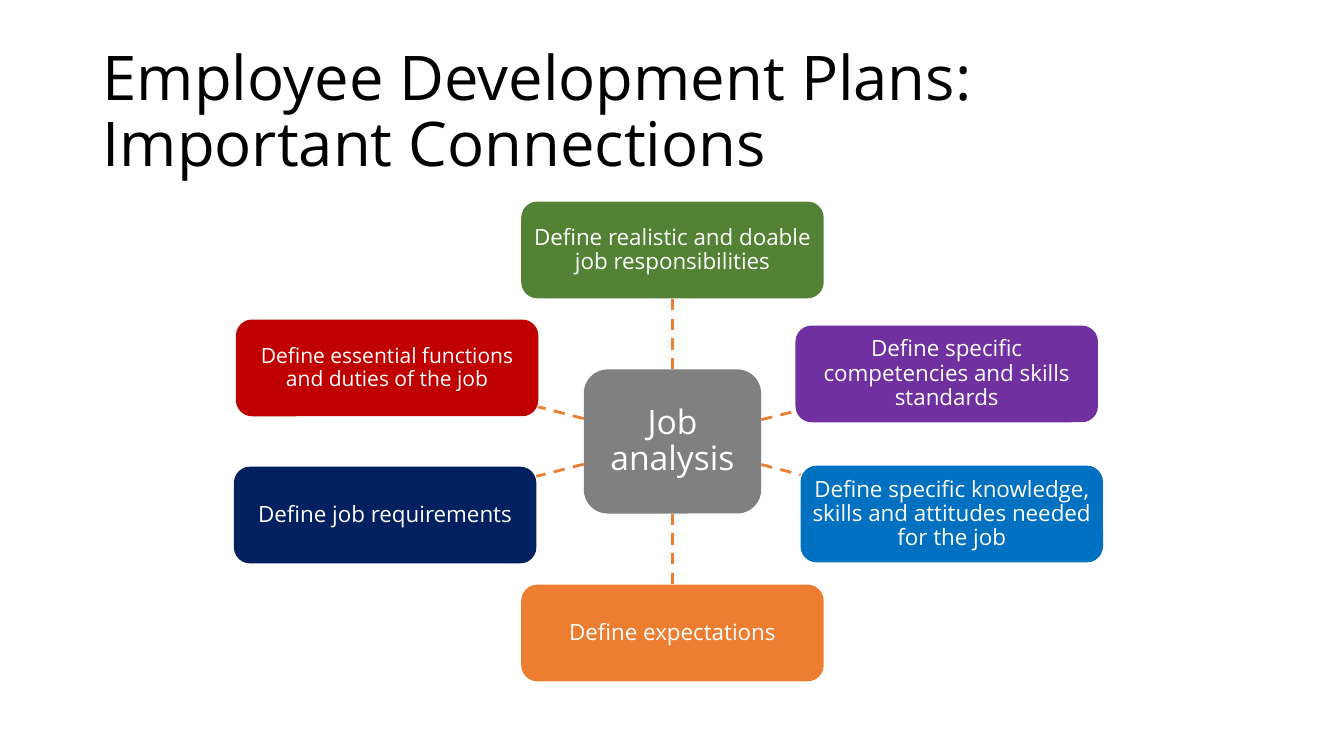
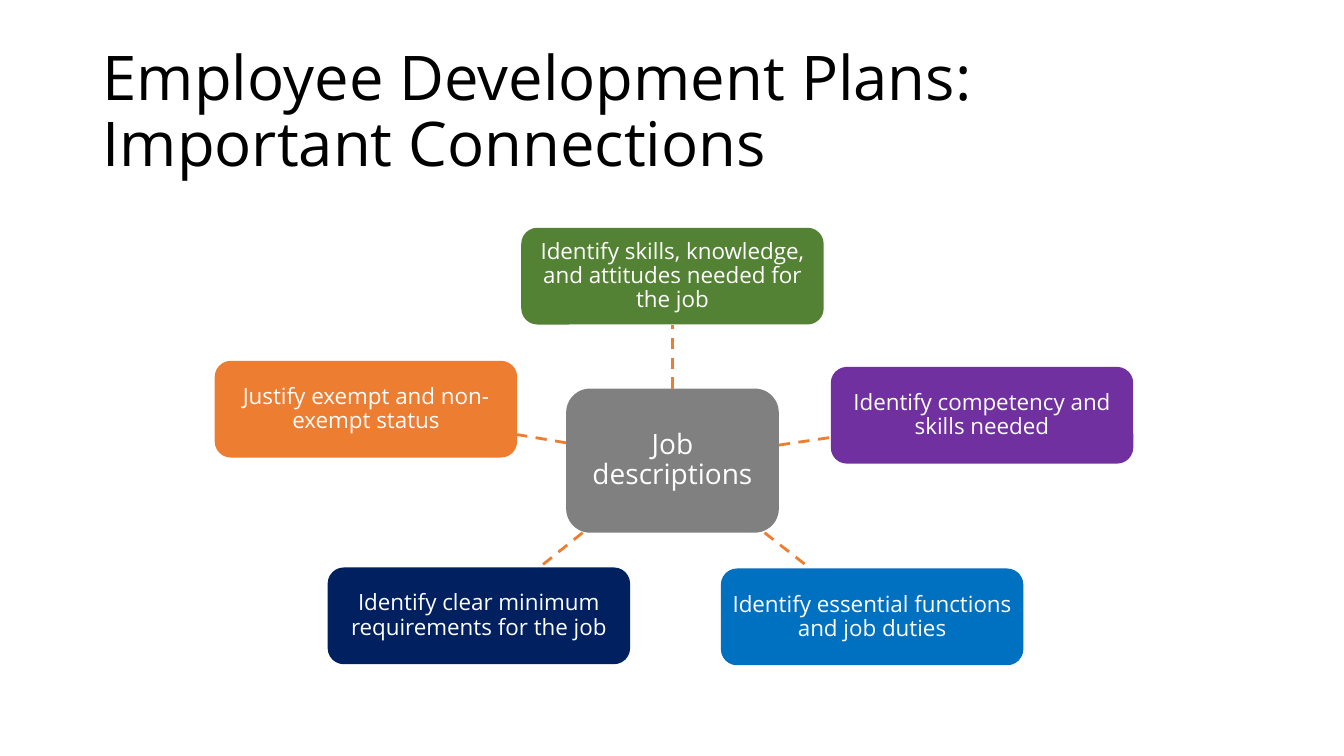
import dataclasses

import lxml.etree
import pptx
import pptx.dml.color
import pptx.enum.dml
import pptx.enum.shapes
import pptx.enum.text
import pptx.oxml.ns
import pptx.util

Inches = pptx.util.Inches


@dataclasses.dataclass(frozen=True)
class Theme:
    font: str = "Open Sans"
    black: str = "000000"
    white: str = "FFFFFF"
    gray: str = "808080"
    green: str = "548235"
    purple: str = "7030A0"
    blue: str = "0070C0"
    orange: str = "ED7D31"
    navy: str = "002060"
    red: str = "C00000"
    title: int = 44
    label: int = 16
    small: int = 15
    dash: int = 2
    inset: float = 0.04
    leading: float = 0.9


THEME = Theme()
TITLE = "Employee Development Plans: Important Connections"
TITLE_BOX = (0.92, 0.4, 11.5, 1.45)
NODE = (3, 0.96)

WHEELS = [
    dict(
        box=(0.92, 2, 11.5, 4.76),
        hub=("Job analysis", (1.76, 1.43), 24),
        nodes=[
            ("Define realistic and doable job responsibilities", THEME.green, THEME.label, (0, -1.9)),
            ("Define specific competencies and skills standards", THEME.purple, THEME.label, (2.72, -0.67)),
            ("Define specific knowledge, skills and attitudes needed for the job", THEME.blue, THEME.label, (2.77, 0.72)),
            ("Define expectations", THEME.orange, THEME.label, (0, 1.9)),
            ("Define job requirements", THEME.navy, THEME.label, (-2.85, 0.73)),
            ("Define essential functions and duties of the job", THEME.red, THEME.small, (-2.83, -0.73)),
        ],
    ),
    dict(
        box=(0.92, 2.26, 11.5, 4.62),
        hub=("Job descriptions", (2.11, 1.43), 20),
        nodes=[
            ("Identify skills, knowledge, and attitudes needed for the job", THEME.green, THEME.label, (0, -1.83)),
            ("Identify competency and skills needed", THEME.purple, THEME.label, (3.07, -0.45)),
            ("Identify essential functions and job duties", THEME.blue, THEME.label, (1.98, 1.55)),
            ("Identify clear minimum requirements for the job", THEME.navy, THEME.label, (-1.92, 1.54)),
            ("Justify exempt and non-exempt status", THEME.orange, THEME.label, (-3.04, -0.51)),
        ],
    ),
]


def tint(text):
    return pptx.dml.color.RGBColor.from_string(text)


def write(frame, text, size, color, align):
    frame.word_wrap = True
    frame.vertical_anchor = pptx.enum.text.MSO_ANCHOR.MIDDLE
    frame.text = text
    para = frame.paragraphs[0]
    para.alignment = align
    para.line_spacing = THEME.leading
    font = para.runs[0].font
    font.name = THEME.font
    font.size = pptx.util.Pt(size)
    font.color.rgb = tint(color)


def add_title(slide, box):
    shape = slide.shapes.add_textbox(*map(Inches, box))
    write(shape.text_frame, TITLE, THEME.title, THEME.black, pptx.enum.text.PP_ALIGN.LEFT)


def add_card(slide, mid, area, text, fill, size):
    (x, y), (width, height) = mid, area
    card = slide.shapes.add_shape(
        pptx.enum.shapes.MSO_SHAPE.ROUNDED_RECTANGLE,
        Inches(x - width / 2), Inches(y - height / 2), Inches(width), Inches(height),
    )
    card.shadow.inherit = False
    card.fill.solid()
    card.fill.fore_color.rgb = tint(fill)
    card.line.fill.background()
    frame = card.text_frame
    frame.margin_left = frame.margin_right = Inches(THEME.inset)
    frame.margin_top = frame.margin_bottom = Inches(THEME.inset)
    write(frame, text, size, THEME.white, pptx.enum.text.PP_ALIGN.CENTER)
    return card


def find_edge(mid, area, shift):
    share = min(side / 2 / abs(step) for side, step in zip(area, shift) if step)
    return [at + step * share for at, step in zip(mid, shift)]


def add_spoke(slide, start, end):
    spoke = slide.shapes.add_connector(
        pptx.enum.shapes.MSO_CONNECTOR.STRAIGHT, *map(Inches, (*start, *end))
    )
    spoke.line.color.rgb = tint(THEME.orange)
    spoke.line.width = pptx.util.Pt(THEME.dash)
    spoke.line.dash_style = pptx.enum.dml.MSO_LINE.DASH
    lxml.etree.SubElement(spoke._element.spPr, pptx.oxml.ns.qn("a:effectLst"))
    return spoke


def add_wheel(slide, box, hub, nodes):
    left, top, width, height = box
    mid = (left + width / 2, top + height / 2)
    name, area, size = hub
    core = add_card(slide, mid, area, name, THEME.gray, size)
    for text, fill, size, shift in nodes:
        spot = [at + step for at, step in zip(mid, shift)]
        card = add_card(slide, spot, NODE, text, fill, size)
        back = [-step for step in shift]
        spoke = add_spoke(slide, find_edge(mid, area, shift), find_edge(spot, NODE, back))
        if shift[0] == 0:
            near, far = (0, 2) if shift[1] < 0 else (2, 0)
            spoke.begin_connect(core, near)
            spoke.end_connect(card, far)


def main():
    deck = pptx.Presentation()
    deck.slide_width = Inches(13.33)
    deck.slide_height = Inches(7.5)
    for wheel in WHEELS:
        slide = deck.slides.add_slide(deck.slide_layouts[6])
        add_title(slide, TITLE_BOX)
        add_wheel(slide, **wheel)
    deck.save("out.pptx")


if __name__ == "__main__":
    main()
